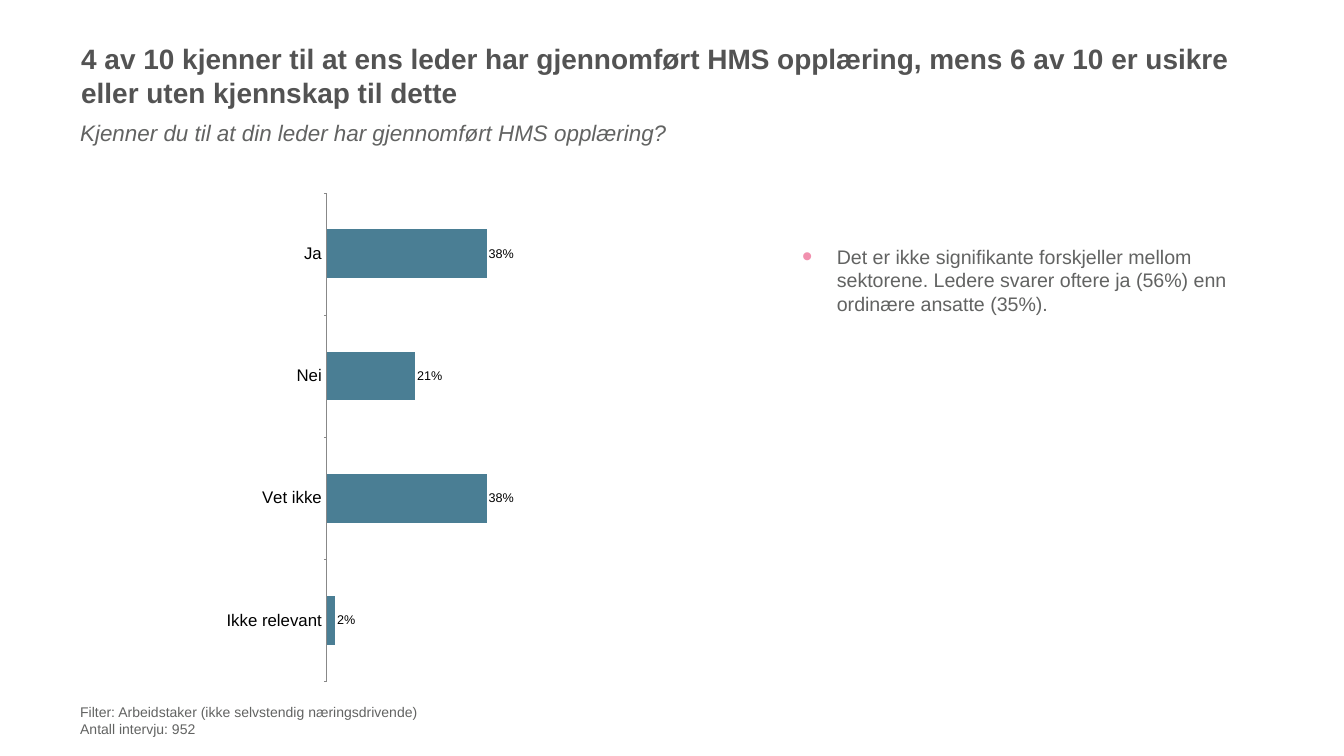
from dataclasses import dataclass

from lxml.etree import SubElement
from pptx import Presentation
from pptx.chart.data import CategoryChartData
from pptx.dml.color import RGBColor
from pptx.enum.chart import XL_CHART_TYPE as ChartType
from pptx.enum.chart import XL_LABEL_POSITION as LabelPosition
from pptx.enum.chart import XL_TICK_MARK as TickMark
from pptx.enum.text import MSO_ANCHOR as Anchor
from pptx.oxml.ns import qn
from pptx.slide import Slide
from pptx.util import Cm, Pt


@dataclass(frozen=True)
class Theme:
    font: str = "Arial"
    title: str = "535353"
    body: str = "626362"
    bullet: str = "F190AE"
    bar: str = "4A7E94"
    axis: str = "888888"
    chart_text: str = "000000"
    title_size: int = 40
    question_size: int = 32
    comment_size: int = 28
    category_size: int = 24
    footer_size: int = 20
    label_size: int = 18


@dataclass(frozen=True)
class Box:
    left: float
    top: float
    width: float
    height: float

    def lengths(self) -> tuple[Cm, Cm, Cm, Cm]:
        return Cm(self.left), Cm(self.top), Cm(self.width), Cm(self.height)


@dataclass(frozen=True)
class TextBlock:
    box: Box
    lines: tuple[str, ...]
    size: int
    color: str
    bold: bool = False
    italic: bool = False
    bulleted: bool = False
    anchor: Anchor = Anchor.TOP


THEME = Theme()
INSET = Cm(0.15)
BULLET_INDENT = Cm(1.75)

TEXT_BLOCKS = (
    TextBlock(
        Box(3.94, 2.24, 60.1, 3.1),
        ("4 av 10 kjenner til at ens leder har gjennomført HMS opplæring, "
         "mens 6 av 10 er usikre eller uten kjennskap til dette",),
        THEME.title_size, THEME.title, bold=True, anchor=Anchor.MIDDLE,
    ),
    TextBlock(
        Box(3.89, 5.87, 60.1, 2.57),
        ("Kjenner du til at din leder har gjennomført HMS opplæring?",),
        THEME.question_size, THEME.body, italic=True,
    ),
    TextBlock(
        Box(3.89, 35.31, 59.33, 2.03),
        ("Filter: Arbeidstaker (ikke selvstendig næringsdrivende)",
         "Antall intervju: 952"),
        THEME.footer_size, THEME.body,
    ),
    TextBlock(
        Box(40.28, 12.19, 23.75, 22.43),
        ("Det er ikke signifikante forskjeller mellom sektorene. "
         "Ledere svarer oftere ja (56%) enn ordinære ansatte (35%).",),
        THEME.comment_size, THEME.body, bulleted=True,
    ),
)

CHART_BOX = Box(3.89, 8.41, 35.94, 26.19)
PLOT_LAYOUT = {"x": 0.35, "y": 0.05, "w": 0.59, "h": 0.94}
ANSWERS = {"Ja": 0.38, "Nei": 0.21, "Vet ikke": 0.38, "Ikke relevant": 0.02}


def style_font(font, size: int, color: str) -> None:
    font.name = THEME.font
    font.size = Pt(size)
    font.color.rgb = RGBColor.from_string(color)


def add_bullet(paragraph) -> None:
    properties = paragraph._p.get_or_add_pPr()
    properties.set("marL", str(BULLET_INDENT))
    properties.set("indent", str(-BULLET_INDENT))
    color = SubElement(properties, qn("a:buClr"))
    SubElement(color, qn("a:srgbClr"), val=THEME.bullet)
    SubElement(properties, qn("a:buSzPct"), val="150000")
    SubElement(properties, qn("a:buFont"), typeface=THEME.font)
    SubElement(properties, qn("a:buChar"), char="•")


def add_text(slide: Slide, block: TextBlock) -> None:
    frame = slide.shapes.add_textbox(*block.box.lengths()).text_frame
    frame.word_wrap = True
    frame.vertical_anchor = block.anchor
    frame.margin_left = frame.margin_right = INSET
    frame.margin_top = frame.margin_bottom = INSET
    frame.text = "\n".join(block.lines)
    for paragraph in frame.paragraphs:
        if block.bulleted:
            add_bullet(paragraph)
        style_font(paragraph.font, block.size, block.color)
        paragraph.font.bold = block.bold
        paragraph.font.italic = block.italic


def fix_plot_area(chart) -> None:
    plot_area = chart._chartSpace.chart.plotArea
    for layout in plot_area.findall(qn("c:layout")):
        plot_area.remove(layout)
    layout = SubElement(plot_area, qn("c:layout"))
    plot_area.insert(0, layout)
    manual = SubElement(layout, qn("c:manualLayout"))
    SubElement(manual, qn("c:layoutTarget"), val="inner")
    for name in ("xMode", "yMode"):
        SubElement(manual, qn(f"c:{name}"), val="edge")
    for name, share in PLOT_LAYOUT.items():
        SubElement(manual, qn(f"c:{name}"), val=str(share))


def add_answer_chart(slide: Slide) -> None:
    data = CategoryChartData(number_format="0%")
    data.categories = list(ANSWERS)
    data.add_series("Series 1", list(ANSWERS.values()))
    chart = slide.shapes.add_chart(
        ChartType.BAR_CLUSTERED, *CHART_BOX.lengths(), data
    ).chart
    chart.has_legend = False
    chart.has_title = False
    style_font(chart.font, THEME.category_size, THEME.chart_text)
    fix_plot_area(chart)

    category_axis = chart.category_axis
    category_axis.reverse_order = True
    category_axis.has_major_gridlines = False
    category_axis.major_tick_mark = TickMark.OUTSIDE
    category_axis.format.line.color.rgb = RGBColor.from_string(THEME.axis)
    category_axis.format.line.width = Pt(0.75)
    style_font(category_axis.tick_labels.font, THEME.category_size, THEME.chart_text)

    value_axis = chart.value_axis
    value_axis.minimum_scale = 0
    value_axis.maximum_scale = 1
    value_axis.has_major_gridlines = False
    value_axis.visible = False

    plot = chart.plots[0]
    plot.vary_by_categories = False
    plot.gap_width = 150
    plot.overlap = -20
    series = plot.series[0]
    series.format.fill.solid()
    series.format.fill.fore_color.rgb = RGBColor.from_string(THEME.bar)
    labels = series.data_labels
    labels.show_value = True
    labels.position = LabelPosition.OUTSIDE_END
    labels.number_format = "0%"
    labels.number_format_is_linked = False
    style_font(labels.font, THEME.label_size, THEME.chart_text)


def main() -> None:
    presentation = Presentation()
    presentation.slide_width = Cm(67.74)
    presentation.slide_height = Cm(38.1)
    slide = presentation.slides.add_slide(presentation.slide_layouts[6])
    add_answer_chart(slide)
    for block in TEXT_BLOCKS:
        add_text(slide, block)
    presentation.save("out.pptx")


if __name__ == "__main__":
    main()
